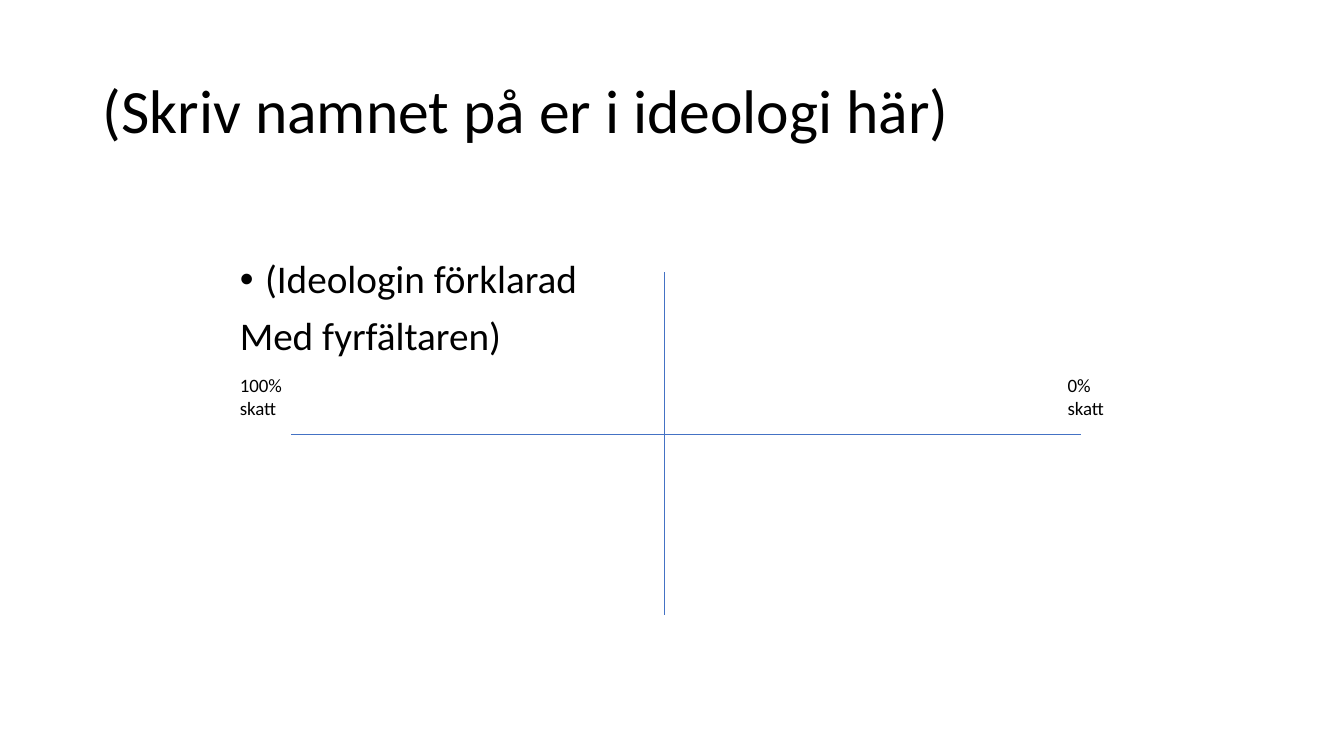
"""Build a slide with a four-field diagram for explaining an ideology."""
import pptx
import pptx.dml.color
import pptx.enum.shapes
import pptx.enum.text
import pptx.oxml.ns
import pptx.util
from lxml import etree
from pptx.util import Inches

FONT, BLACK, BLUE = "Calibri", "000000", "4472C4"
TITLE = "(Skriv namnet på er i ideologi här)"
TITLE_BOX = (0.92, 0.4, 11.5, 1.45)
BODY = [("(Ideologin förklarad", True), ("Med fyrfältaren)", False)]
BODY_BOX = (2.28, 2.53, 8.62, 3.57)
AXES = [(2.89, 4.31, 10.72, 4.31), (6.59, 2.7, 6.59, 6.1)]
LABELS = [("100% skatt", (2.28, 3.66, 0.74, 0.56)),
          ("0% skatt", (10.49, 3.66, 0.57, 0.56))]


def rgb(color):
    return pptx.dml.color.RGBColor.from_string(color)


def add_run(p, text, size):
    r = p.add_run()
    r.text = text
    r.font.name = FONT
    r.font.size = pptx.util.Pt(size)
    r.font.color.rgb = rgb(BLACK)


def add_text_box(s, box):
    tf = s.shapes.add_textbox(*map(Inches, box)).text_frame
    tf.word_wrap = True
    return tf


def add_bullet(p):
    pPr = p._p.get_or_add_pPr()
    pPr.set("marL", str(Inches(0.25)))
    pPr.set("indent", str(-Inches(0.25)))
    font = etree.SubElement(pPr, pptx.oxml.ns.qn("a:buFont"))
    font.set("typeface", "Arial")
    etree.SubElement(pPr, pptx.oxml.ns.qn("a:buChar")).set("char", "•")


def add_title(s):
    title = s.shapes.title
    title.left, title.top, title.width, title.height = map(Inches, TITLE_BOX)
    tf = title.text_frame
    tf.word_wrap = True
    tf.auto_size = pptx.enum.text.MSO_AUTO_SIZE.NONE
    tf.vertical_anchor = pptx.enum.text.MSO_ANCHOR.MIDDLE
    p = tf.paragraphs[0]
    p.alignment = pptx.enum.text.PP_ALIGN.LEFT
    p.line_spacing = 0.9
    add_run(p, TITLE, 44)


def add_body(s):
    tf = add_text_box(s, BODY_BOX)
    for i, (text, bulleted) in enumerate(BODY):
        p = tf.add_paragraph() if i else tf.paragraphs[0]
        p.line_spacing = 0.9
        p.space_before = pptx.util.Pt(10)
        if bulleted:
            add_bullet(p)
        add_run(p, text, 28)


def add_axis(s, ends):
    line = s.shapes.add_connector(
        pptx.enum.shapes.MSO_CONNECTOR.STRAIGHT, *map(Inches, ends))
    line.line.color.rgb = rgb(BLUE)
    line.line.width = pptx.util.Pt(0.5)
    etree.SubElement(line._element.spPr, pptx.oxml.ns.qn("a:effectLst"))


def add_label(s, text, box):
    tf = add_text_box(s, box)
    tf.auto_size = pptx.enum.text.MSO_AUTO_SIZE.SHAPE_TO_FIT_TEXT
    add_run(tf.paragraphs[0], text, 13.5)


def main():
    prs = pptx.Presentation()
    prs.slide_width, prs.slide_height = Inches(13.33), Inches(7.5)
    s = prs.slides.add_slide(prs.slide_layouts[5])
    add_title(s)
    add_body(s)
    for ends in AXES:
        add_axis(s, ends)
    for text, box in LABELS:
        add_label(s, text, box)
    prs.save("out.pptx")


if __name__ == "__main__":
    main()
